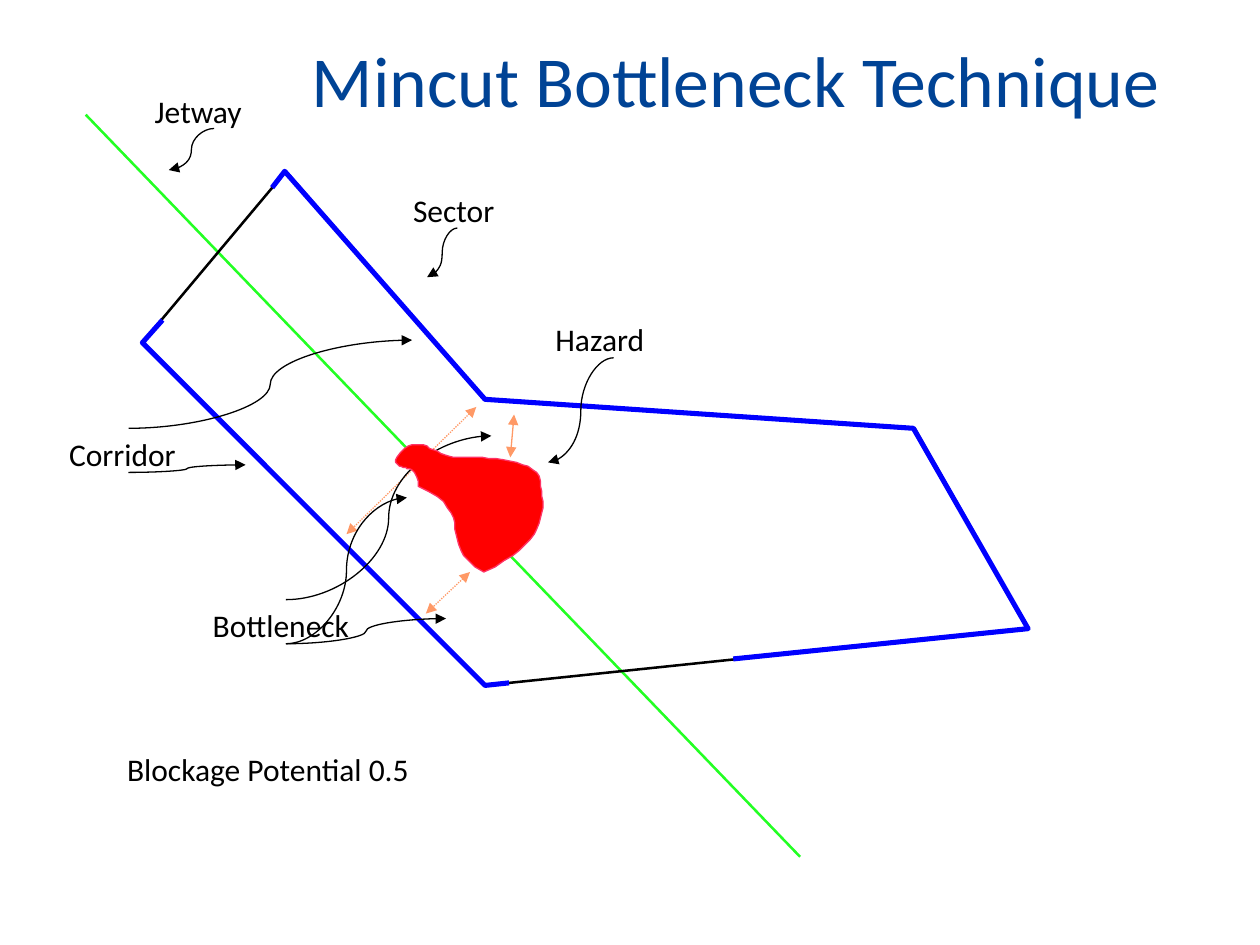
from lxml import etree
from pptx import Presentation
from pptx.dml.color import RGBColor
from pptx.enum.dml import MSO_LINE
from pptx.enum.shapes import MSO_CONNECTOR
from pptx.enum.text import MSO_ANCHOR, MSO_AUTO_SIZE, PP_ALIGN
from pptx.oxml.ns import qn
from pptx.util import Pt

PX = 9144  # 100 px to the inch
FONT = "Calibri"
BLACK = RGBColor(0x00, 0x00, 0x00)
NAVY = RGBColor(0x00, 0x43, 0x95)
BLUE = RGBColor(0x00, 0x00, 0xFF)
GREEN = RGBColor(0x23, 0xFF, 0x23)
ORANGE = RGBColor(0xFF, 0x99, 0x66)
RED = RGBColor(0xFF, 0x00, 0x00)
PINK = RGBColor(0xFF, 0x33, 0x66)
STRAIGHT, CURVE = MSO_CONNECTOR.STRAIGHT, MSO_CONNECTOR.CURVE
DOTTED = MSO_LINE.ROUND_DOT


def shift(box, points):
    """Move points from the box to the slide."""
    return [(box[0] + x, box[1] + y) for x, y in points]


def add_label(s, box, x, y, w, text):
    tb = s.shapes.add_textbox(*(v * PX for v in (box[0] + x, box[1] + y, w, 34)))
    tf = tb.text_frame
    tf.word_wrap = True
    tf.margin_left = tf.margin_right = 10 * PX
    tf.margin_top = tf.margin_bottom = 5 * PX
    p = tf.paragraphs[0]
    p.text = text
    p.font.name, p.font.size, p.font.color.rgb = FONT, Pt(18), BLACK


def add_line(s, box, start, end, kind=STRAIGHT, color=BLACK, width=0.75,
             dash=None, ends=()):
    (x1, y1), (x2, y2) = shift(box, (start, end))
    c = s.shapes.add_connector(kind, x1 * PX, y1 * PX, x2 * PX, y2 * PX)
    c.line.color.rgb, c.line.width = color, Pt(width)
    if dash:
        c.line.dash_style = dash
    for end_tag in ends:
        etree.SubElement(c.line._get_or_add_ln(), qn(end_tag), type="triangle")
    etree.SubElement(c._element.spPr, qn("a:effectLst"))


def add_pointer(s, box, start, end):
    add_line(s, box, start, end, CURVE, ends=("a:tailEnd",))


def add_gap(s, box, start, end, dash=DOTTED):
    add_line(s, box, start, end, color=ORANGE, dash=dash,
             ends=("a:headEnd", "a:tailEnd"))


def add_outline(s, box, points, color, width, close=False, fill=None):
    points = shift(box, points)
    fb = s.shapes.build_freeform(*points[0], scale=PX)
    fb.add_line_segments(points[1:], close=close)
    sp = fb.convert_to_shape()
    sp.shadow.inherit = False
    if fill is None:
        sp.fill.background()
    else:
        sp.fill.solid()
        sp.fill.fore_color.rgb = fill
    sp.line.color.rgb, sp.line.width = color, Pt(width)


def bezier(start, curves, steps=16):
    """Sample a chain of cubic curves as points."""
    points = [start]
    for x1, y1, x2, y2, x3, y3 in curves:
        x0, y0 = points[-1]
        for i in range(1, steps + 1):
            t = i / steps
            a, b, c, d = (1 - t)**3, 3 * t * (1 - t)**2, 3 * t * t * (1 - t), t**3
            points.append((a * x0 + b * x1 + c * x2 + d * x3,
                           a * y0 + b * y1 + c * y2 + d * y3))
    return points


def add_title(s, left, top, width, height):
    sp = s.shapes.title
    sp.left, sp.top, sp.width, sp.height = (v * PX for v in (left, top, width, height))
    tf = sp.text_frame
    tf.auto_size, tf.vertical_anchor = MSO_AUTO_SIZE.NONE, MSO_ANCHOR.MIDDLE
    p = tf.paragraphs[0]
    p.text, p.alignment = "Mincut Bottleneck Technique", PP_ALIGN.CENTER
    p.font.name, p.font.size, p.font.color.rgb = FONT, Pt(41), NAVY
    p._p.get_or_add_pPr().set("marL", str(6 * PX))


def add_jetway(s, box):
    add_line(s, box, (0, 23), (567, 612), color=GREEN, width=1.45)
    add_label(s, box, 45, 0, 113, "Jetway")
    add_pointer(s, box, (102, 34), (66, 67))


def add_sector(s, box):
    add_label(s, box, 205, 11, 91, "Sector")
    add_pointer(s, box, (250, 45), (226, 84))
    add_outline(s, box, [(114, 0), (0, 136), (272, 408), (703, 363), (613, 204),
                         (272, 181)], BLACK, 1.45, close=True)


def add_corridor(s, box):
    # Blocked sides of the sector
    add_outline(s, box, [(84, 118), (68, 136), (340, 408), (359, 406)], BLUE, 2.89)
    add_outline(s, box, [(537, 387), (771, 363), (680, 204), (340, 181), (181, 0),
                         (171, 13)], BLUE, 2.89)
    add_label(s, box, 0, 204, 113, "Corridor")
    add_pointer(s, box, (57, 239), (150, 233))
    add_pointer(s, box, (57, 204), (282, 134))


def add_bottleneck(s, box):
    add_label(s, box, 0, 153, 136, "Bottleneck")
    # Widths of the free passages
    add_gap(s, box, (219, 0), (116, 101))
    add_gap(s, box, (214, 131), (179, 164))
    add_gap(s, box, (246, 40), (249, 6), dash=None)
    for start, end in [((68, 188), (164, 72)), ((68, 188), (195, 168)),
                       ((68, 153), (231, 23))]:
        add_pointer(s, box, start, end)


def add_hazard(s, box):
    cloud = bezier((5, 114), [(0, 128, 22, 114, 22, 137), (72, 159, 33, 182, 74, 205),
                              (123, 182, 123, 159, 119, 137),
                              (121, 114, 75, 114, 53, 114), (35, 114, 22, 91, 5, 114)])
    add_outline(s, box, cloud, PINK, 0.75, close=True, fill=RED)
    add_label(s, box, 121, 0, 113, "Hazard")
    add_pointer(s, box, (177, 35), (125, 118))


def main():
    prs = Presentation()
    prs.slide_width, prs.slide_height = 1000 * PX, 750 * PX
    s = prs.slides.add_slide(prs.slide_layouts[5])
    add_title(s, 195, 0, 773, 125)
    # Each region takes the left and top of its box
    add_jetway(s, (68, 68))
    add_sector(s, (113, 136))
    add_corridor(s, (45, 136))
    add_bottleneck(s, (159, 323))
    add_hazard(s, (310, 249))
    add_label(s, (91, 590), 0, 0, 272, "Blockage Potential 0.5")
    prs.save("out.pptx")


if __name__ == "__main__":
    main()
